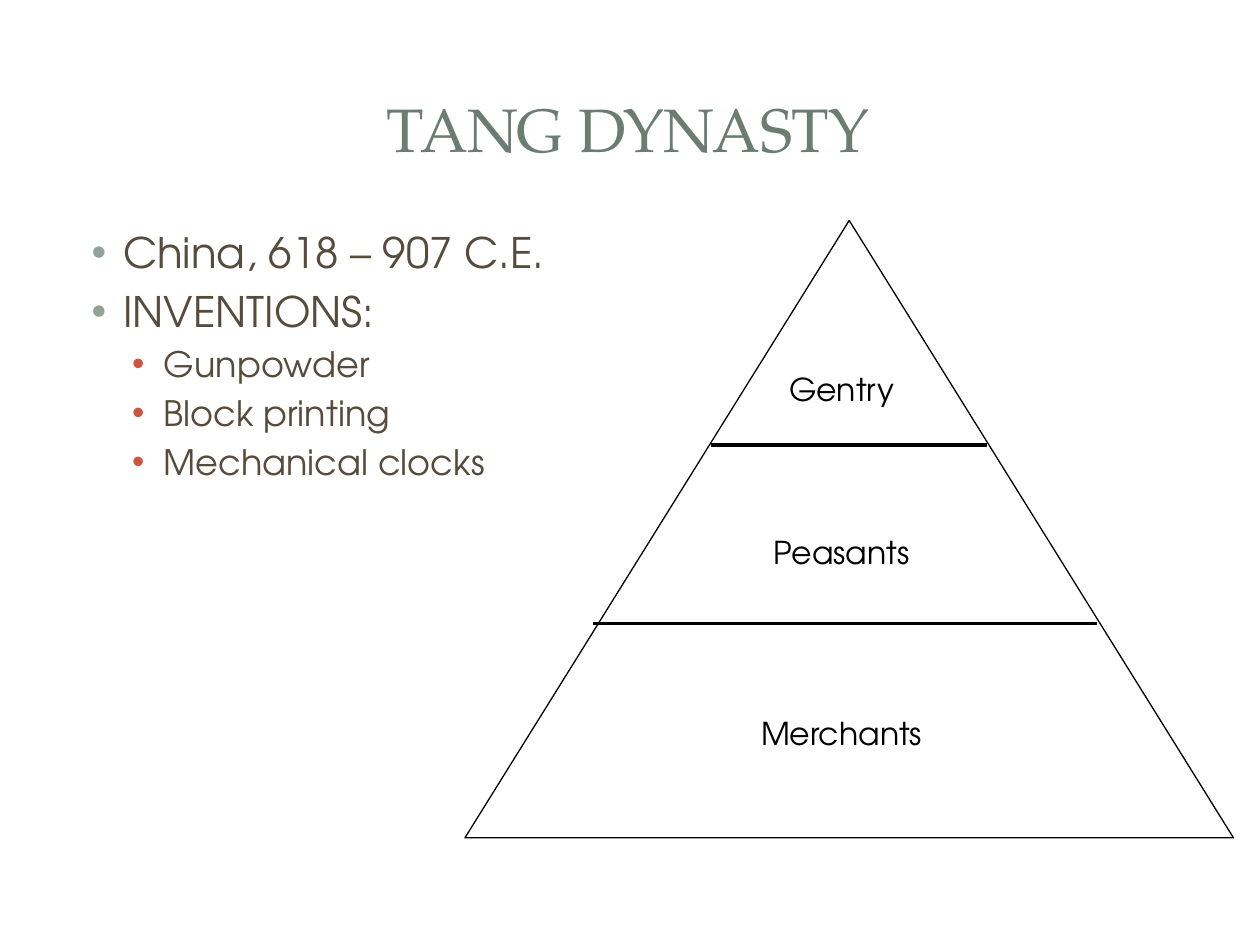
from lxml import etree
from pptx import Presentation, util as u
from pptx.dml.color import RGBColor
from pptx.enum import shapes, text
from pptx.oxml.ns import qn

In = u.Inches
SANS, SERIF = "TeX Gyre Adventor", "TeX Gyre Pagella"
INK = "000000"
CENTER = text.PP_ALIGN.CENTER
# Outline levels: left margin, text size, bullet colour
LEVELS = [(0.38, 24, "93A299"), (0.7, 20, "CF543F")]


def color(code):
    return RGBColor.from_string(code)


def style(run, tint, **form):
    for key, val in form.items():
        setattr(run.font, key, val)
    run.font.color.rgb = color(tint)


def add_box(slide, box, anchor=text.MSO_ANCHOR.TOP):
    frame = slide.shapes.add_textbox(*map(In, box)).text_frame
    frame.word_wrap = True
    frame.vertical_anchor = anchor
    return frame


def add_label(slide, box, words, tint, name, size, **opts):
    para = add_box(slide, box, **opts).paragraphs[0]
    para.alignment = CENTER
    run = para.add_run()
    run.text = words
    style(run, tint, name=name, size=u.Pt(size))


def add_bullet(para, margin, tint):
    props = para._p.get_or_add_pPr()
    props.set("marL", str(In(margin)))
    props.set("indent", str(In(-0.25)))
    shade = etree.SubElement(props, qn("a:buClr"))
    etree.SubElement(shade, qn("a:srgbClr"), val=tint)
    etree.SubElement(props, qn("a:buFont"), typeface="Arial")
    etree.SubElement(props, qn("a:buChar"), char="•")


def add_outline(slide, box, items):
    frame = add_box(slide, box)
    for i, (level, words) in enumerate(items):
        para = frame.add_paragraph() if i else frame.paragraphs[0]
        margin, size, tint = LEVELS[level]
        para.level = level
        para.space_before = u.Pt(size * 0.2)
        add_bullet(para, margin, tint)
        run = para.add_run()
        run.text = words
        style(run, "564B3C", name=SANS, size=u.Pt(size))


def add_pyramid(slide, box, rules, labels):
    left, top, width, height = box
    # Outline
    body = slide.shapes.add_shape(
        shapes.MSO_SHAPE.ISOSCELES_TRIANGLE, *map(In, box))
    body.shadow.inherit = False
    body.fill.background()
    body.line.color.rgb = color(INK)
    body.line.width = u.Pt(0.75)
    # Dividers: start, end and drop from the top
    for start, end, drop in rules:
        y = In(top + drop)
        rule = slide.shapes.add_connector(
            shapes.MSO_CONNECTOR.STRAIGHT, In(left + start), y, In(left + end), y)
        rule.line.color.rgb = color(INK)
        rule.line.width = u.Pt(2)
        etree.SubElement(rule._element.spPr, qn("a:effectLst"))
    # Class names: drop from the top
    for drop, words in labels:
        add_label(slide, (left + 2.14, top + drop, 1.7, 0.4), words, INK, SANS, 18)


def main():
    deck = Presentation()
    deck.slide_width, deck.slide_height = In(10), In(7.5)
    slide = deck.slides.add_slide(deck.slide_layouts[6])
    add_label(slide, (0.47, 0.45, 9.03, 1.14), "TANG DYNASTY", "6B7D72",
              SERIF, 35, anchor=text.MSO_ANCHOR.MIDDLE)
    add_outline(slide, (0.5, 1.75, 5.33, 5.14), [
        (0, "China, 618 – 907 C.E."),
        (0, "INVENTIONS:"),
        (1, "Gunpowder"),
        (1, "Block printing"),
        (1, "Mechanical clocks"),
    ])
    add_pyramid(slide, (3.69, 1.75, 6.1, 4.9),
                [(1.95, 4.14, 1.78), (1.02, 5.02, 3.2)],
                [(1.14, "Gentry"), (2.43, "Peasants"), (3.87, "Merchants")])
    deck.save("out.pptx")


if __name__ == "__main__":
    main()
